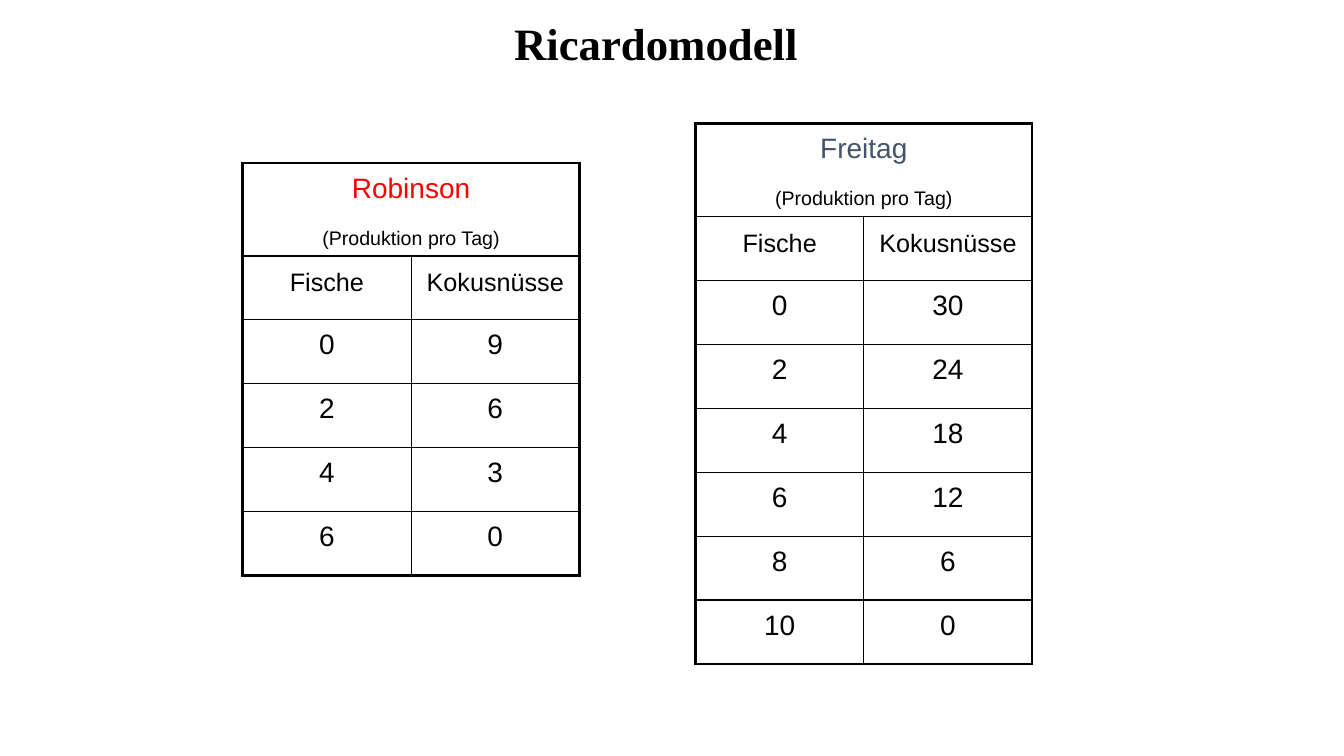
from dataclasses import dataclass

import pptx
import pptx.dml.color
import pptx.enum.text
import pptx.oxml.ns
import pptx.util
from lxml import etree

Cm = pptx.util.Cm
Pt = pptx.util.Pt
BLACK = "000000"
THICK, THIN = 2.25, 1
COLUMN_WIDTH, HEADING_HEIGHT, ROW_HEIGHT = 4.24, 2.34, 1.61
GOODS = ("Fische", "Kokusnüsse")


@dataclass(frozen=True)
class Producer:
    name: str
    color: str
    left: float
    top: float
    output: tuple[tuple[int, int], ...]


PRODUCERS = (
    Producer("Robinson", "FF0000", 6.12, 4.11, ((0, 9), (2, 6), (4, 3), (6, 0))),
    Producer("Freitag", "44546A", 17.53, 3.12,
             ((0, 30), (2, 24), (4, 18), (6, 12), (8, 6), (10, 0))),
)


def rgb(value: str) -> pptx.dml.color.RGBColor:
    return pptx.dml.color.RGBColor.from_string(value)


def write(paragraph, text: str, *, size: float, font: str = "Arial", color: str = BLACK,
          bold: bool = False, line_spacing: float | None = None, before: float = 0) -> None:
    paragraph.alignment = pptx.enum.text.PP_ALIGN.CENTER
    paragraph.space_before = Pt(before)
    if line_spacing is not None:
        paragraph.line_spacing = Pt(line_spacing)
    run = paragraph.add_run()
    run.text = text
    run.font.name = font
    run.font.size = Pt(size)
    run.font.bold = bold
    run.font.color.rgb = rgb(color)


def write_in_table(paragraph, text: str, size: float, color: str = BLACK) -> None:
    write(paragraph, text, size=size, color=color, line_spacing=25.6, before=6.8)


def draw_borders(cell, widths: dict[str, float]) -> None:
    qn = pptx.oxml.ns.qn
    properties = cell._tc.get_or_add_tcPr()
    for side, width in widths.items():
        border = etree.SubElement(properties, qn(f"a:ln{side}"), w=str(Pt(width)))
        fill = etree.SubElement(border, qn("a:solidFill"))
        etree.SubElement(fill, qn("a:srgbClr"), val=BLACK)


def add_production_table(slide, producer: Producer) -> None:
    row_count = len(producer.output) + 2
    frame = slide.shapes.add_table(
        row_count, 2, Cm(producer.left), Cm(producer.top), Cm(2 * COLUMN_WIDTH),
        Cm(HEADING_HEIGHT + (row_count - 1) * ROW_HEIGHT))
    table = frame.table
    table.first_row = False
    table.horz_banding = False
    for column in table.columns:
        column.width = Cm(COLUMN_WIDTH)
    for index, row in enumerate(table.rows):
        row.height = Cm(ROW_HEIGHT if index else HEADING_HEIGHT)
        for side, cell in enumerate(row.cells):
            draw_borders(cell, {
                "L": THIN if side else THICK,
                "R": THICK if side or index == 0 else THIN,
                "T": THIN if index else THICK,
                "B": THICK if index == row_count - 1 else THIN,
            })
            cell.fill.background()

    heading = table.cell(0, 0)
    heading.merge(table.cell(0, 1))
    write_in_table(heading.text_frame.paragraphs[0], producer.name, 20, producer.color)
    write_in_table(heading.text_frame.add_paragraph(), "(Produktion pro Tag)", 14)
    for index, values in enumerate((GOODS, *producer.output), start=1):
        for side, value in enumerate(values):
            write_in_table(table.cell(index, side).text_frame.paragraphs[0],
                           str(value), 18 if index == 1 else 20)


def add_title(slide) -> None:
    title = slide.shapes.add_textbox(Cm(5.13), Cm(0.08), Cm(22.81), Cm(2.01)).text_frame
    title.word_wrap = True
    title.vertical_anchor = pptx.enum.text.MSO_ANCHOR.MIDDLE
    write(title.paragraphs[0], "Ricardomodell", size=32, font="Times New Roman", bold=True)


def main() -> None:
    presentation = pptx.Presentation()
    presentation.slide_width = Cm(33.87)
    presentation.slide_height = Cm(19.05)
    slide = presentation.slides.add_slide(presentation.slide_layouts[6])
    for producer in PRODUCERS:
        add_production_table(slide, producer)
    add_title(slide)
    presentation.save("out.pptx")


if __name__ == "__main__":
    main()
